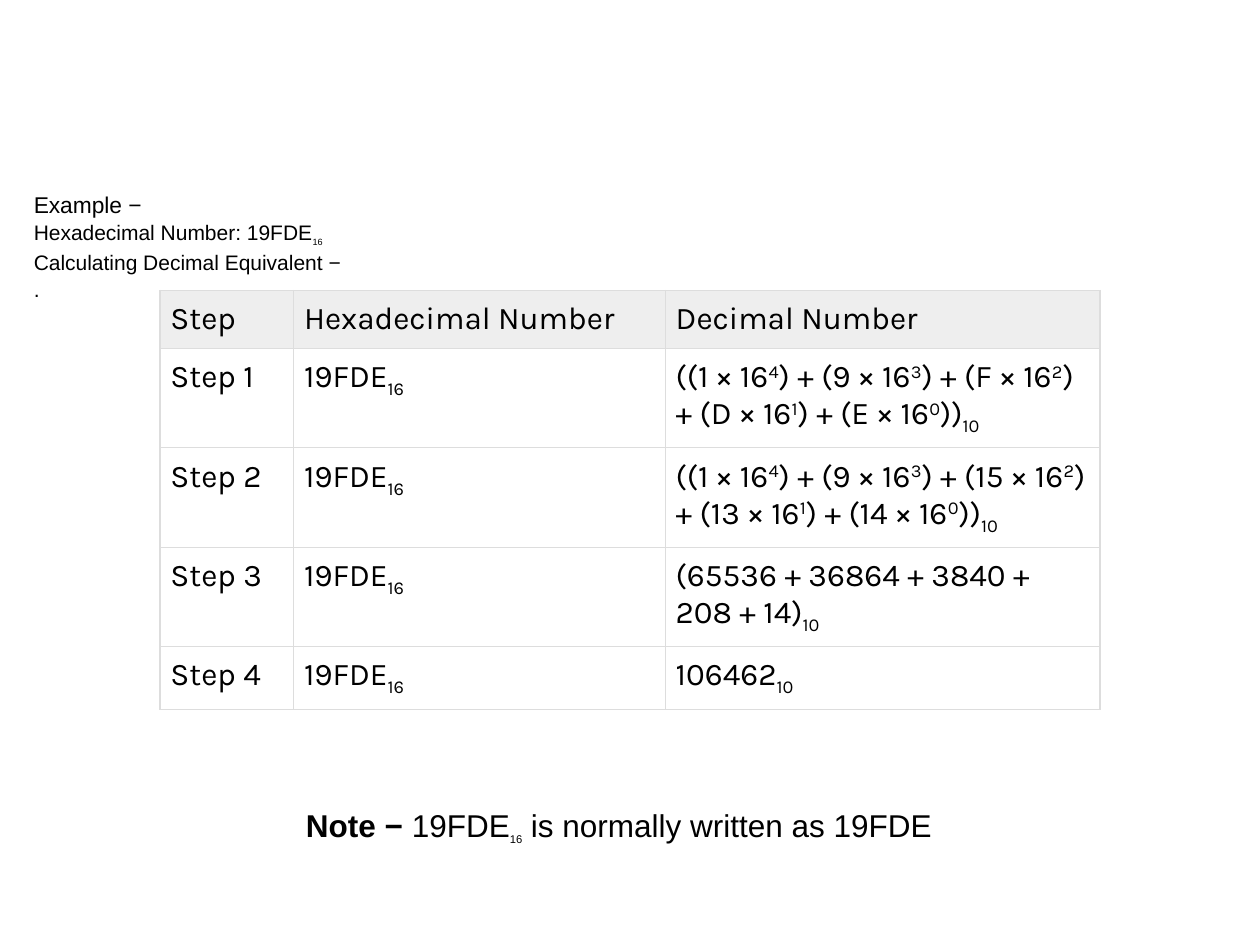
from dataclasses import dataclass

import pptx
import pptx.dml.color
import pptx.enum.text
import pptx.oxml
import pptx.oxml.ns
import pptx.util

Pt = pptx.util.Pt
ALIGN = pptx.enum.text.PP_ALIGN
ANCHOR = pptx.enum.text.MSO_ANCHOR

BLACK = "000000"
HEADER_GREY = "EEEEEE"
BORDER_GREY = "DDDDDD"
COLUMN_WIDTHS = (76.32, 212.4, 248.4)
ROW_HEIGHTS = (33, 56.7, 56.7, 56.7, 36)
CELL_MARGIN = 6


@dataclass
class Piece:
    text: str
    size: float = 18
    baseline: int = 0
    bold: bool = False


@dataclass
class TextBlock:
    left: float
    top: float
    width: float
    height: float
    lines: list[list[Piece]]
    align: ALIGN = ALIGN.LEFT
    anchor: ANCHOR = ANCHOR.TOP


def rgb(value: str) -> pptx.dml.color.RGBColor:
    return pptx.dml.color.RGBColor.from_string(value)


def based(number: str, base: str) -> list[Piece]:
    """A number followed by its base as a subscript."""
    return [Piece(number), Piece(base, baseline=-25)]


def expansion(digits: list[str]) -> list[Piece]:
    """The sum of digits times powers of 16, as a base 10 number."""
    pieces = []
    opening = "((" 
    for power, digit in zip(reversed(range(len(digits))), digits):
        pieces += [Piece(f"{opening}{digit} × 16"), Piece(str(power), baseline=30)]
        opening = ") + ("
    return pieces + based("))", "10")


def write_line(paragraph, pieces: list[Piece], font_name: str) -> None:
    for piece in pieces:
        run = paragraph.add_run()
        run.text = piece.text
        run.font.name = font_name
        run.font.size = Pt(piece.size)
        run.font.bold = piece.bold
        run.font.color.rgb = rgb(BLACK)
        if piece.baseline:
            run._r.get_or_add_rPr().set("baseline", str(piece.baseline * 1000))


def add_text(slide, block: TextBlock) -> None:
    box = slide.shapes.add_textbox(
        Pt(block.left), Pt(block.top), Pt(block.width), Pt(block.height))
    frame = box.text_frame
    frame.word_wrap = True
    frame.vertical_anchor = block.anchor
    for index, line in enumerate(block.lines):
        paragraph = frame.add_paragraph() if index else frame.paragraphs[0]
        paragraph.alignment = block.align
        paragraph.line_spacing = 1.07
        write_line(paragraph, line, "Arial")


def add_borders(cell) -> None:
    properties = cell._tc.get_or_add_tcPr()
    for index, side in enumerate(("lnL", "lnR", "lnT", "lnB")):
        properties.insert(index, pptx.oxml.parse_xml(
            f'<a:{side} {pptx.oxml.ns.nsdecls("a")} w="{Pt(0.75)}"><a:solidFill>'
            f'<a:srgbClr val="{BORDER_GREY}"/></a:solidFill></a:{side}>'))


def add_steps_table(slide, rows: list[list[list[Piece]]]) -> None:
    table = slide.shapes.add_table(
        len(rows), len(COLUMN_WIDTHS), Pt(91.44), Pt(166),
        Pt(sum(COLUMN_WIDTHS)), Pt(sum(ROW_HEIGHTS))).table
    table.horz_banding = False
    for column, width in zip(table.columns, COLUMN_WIDTHS):
        column.width = Pt(width)
    for row_index, (row, height) in enumerate(zip(rows, ROW_HEIGHTS)):
        table.rows[row_index].height = Pt(height)
        for column_index, pieces in enumerate(row):
            cell = table.cell(row_index, column_index)
            cell.margin_left = cell.margin_right = Pt(CELL_MARGIN)
            cell.margin_top = cell.margin_bottom = Pt(CELL_MARGIN)
            if row_index == 0:
                cell.fill.solid()
                cell.fill.fore_color.rgb = rgb(HEADER_GREY)
            else:
                cell.fill.background()
            add_borders(cell)
            write_line(cell.text_frame.paragraphs[0], pieces, "Karla")


def main() -> None:
    presentation = pptx.Presentation()
    presentation.slide_width, presentation.slide_height = Pt(720), Pt(540)
    slide = presentation.slides.add_slide(presentation.slide_layouts[6])

    headings = [[Piece(name)] for name in ("Step", "Hexadecimal Number", "Decimal Number")]
    results = [
        expansion(["1", "9", "F", "D", "E"]),
        expansion(["1", "9", "15", "13", "14"]),
        based("(65536 + 36864 + 3840 + 208 + 14)", "10"),
        based("106462", "10"),
    ]
    steps = [[[Piece(f"Step {number}")], based("19FDE", "16"), result]
             for number, result in enumerate(results, start=1)]
    add_steps_table(slide, [headings] + steps)

    example = TextBlock(12.24, 106.56, 612, 67, [
        [Piece("Example −", 13)],
        [Piece("Hexadecimal Number: 19FDE", 12), Piece("16", 9, -30)],
        [Piece("Calculating Decimal Equivalent −", 12)],
        [Piece(".", 12)],
    ], ALIGN.JUSTIFY, ANCHOR.MIDDLE)
    note = TextBlock(167.76, 455.76, 432, 28.8, [[
        Piece("Note −", bold=True), Piece(" 19FDE"), Piece("16", 11, -30),
        Piece(" is normally written as 19FDE"),
    ]])
    for block in (example, note):
        add_text(slide, block)

    presentation.save("out.pptx")


if __name__ == "__main__":
    main()
